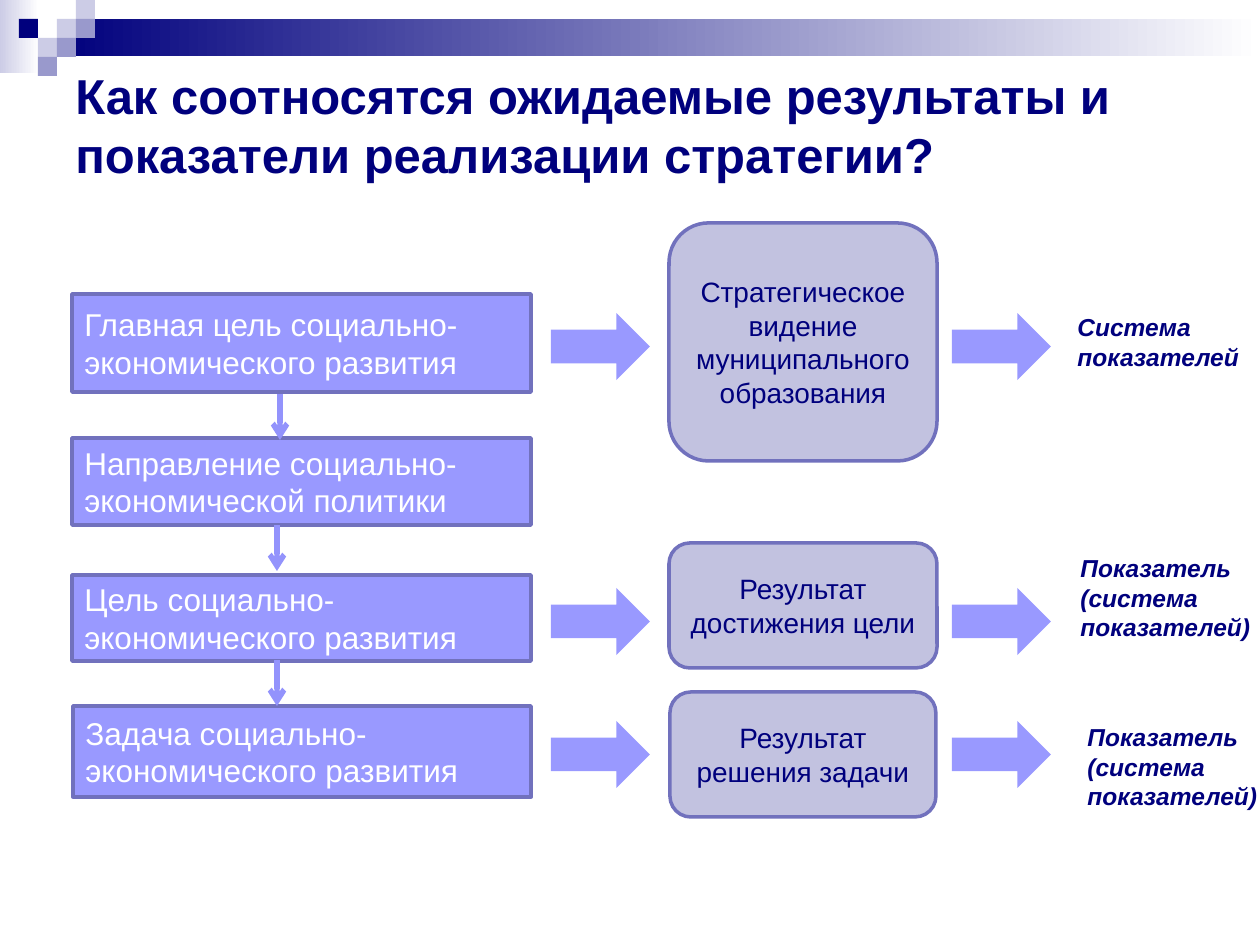
"""Build a slide relating strategy goals to expected results and indicators."""
from typing import NamedTuple

from lxml.etree import SubElement
from pptx import Presentation
from pptx.dml.color import RGBColor
from pptx.enum.shapes import MSO_CONNECTOR, MSO_SHAPE
from pptx.enum.text import MSO_ANCHOR, PP_ALIGN
from pptx.oxml.ns import qn
from pptx.util import Emu, Pt

NAVY = RGBColor(0x00, 0x00, 0x7D)
WHITE = RGBColor(0xFF, 0xFF, 0xFF)
LAVENDER = RGBColor(0xCC, 0xCC, 0xE6)
MUTED = RGBColor(0x99, 0x99, 0xCC)
PERIWINKLE = RGBColor(0x99, 0x99, 0xFF)
OUTLINE = RGBColor(0x71, 0x71, 0xBD)
RESULT_FILL = RGBColor(0xC2, 0xC2, 0xE0)
LINK = RGBColor(0x93, 0x93, 0xFC)

PIXELS_PER_INCH = 126
CELL = 19


class Box(NamedTuple):
    left: int
    top: int
    width: int
    height: int


class Card(NamedTuple):
    box: Box
    text: str
    kind: MSO_SHAPE = MSO_SHAPE.FLOWCHART_PROCESS


class Square(NamedTuple):
    column: int
    row: int
    color: RGBColor


class DownLink(NamedTuple):
    x: int
    top: int
    bottom: int


SQUARES = [
    Square(3, 1, LAVENDER), Square(4, 0, LAVENDER), Square(4, 1, MUTED),
    Square(2, 2, LAVENDER), Square(1, 1, NAVY), Square(3, 2, MUTED),
    Square(2, 3, MUTED),
]
GOALS = [
    Card(Box(72, 294, 459, 98), "Главная цель социально-экономического развития", MSO_SHAPE.PENTAGON),
    Card(Box(72, 438, 459, 87), "Направление социально-экономической политики"),
    Card(Box(72, 575, 459, 86), "Цель социально-экономического развития"),
    Card(Box(73, 706, 458, 91), "Задача социально-экономического развития"),
]
RESULTS = [
    Card(Box(669, 223, 268, 238), "Стратегическое видение муниципального образования"),
    Card(Box(669, 543, 268, 125), "Результат достижения цели"),
    Card(Box(670, 692, 266, 125), "Результат решения задачи"),
]
INDICATORS = [
    Card(Box(1065, 306, 192, 72), "Система показателей"),
    Card(Box(1068, 547, 196, 102), "Показатель (система показателей)"),
    Card(Box(1075, 716, 196, 102), "Показатель (система показателей)"),
]
DOWN_LINKS = [DownLink(280, 394, 440), DownLink(277, 525, 571), DownLink(277, 660, 706)]
ARROW_COLUMNS = (551, 952)
ARROW_ROWS = (313, 588, 721)


def px(value: int) -> Emu:
    return Emu(round(value * 914400 / PIXELS_PER_INCH))


def place(box: Box) -> list[Emu]:
    return [px(value) for value in box]


def write(shape, text: str, *, size: int, color: RGBColor, bold: bool = False, italic: bool = False,
          align: PP_ALIGN = PP_ALIGN.LEFT, anchor: MSO_ANCHOR = MSO_ANCHOR.MIDDLE) -> None:
    frame = shape.text_frame
    frame.word_wrap = True
    frame.vertical_anchor = anchor
    paragraph = frame.paragraphs[0]
    paragraph.alignment = align
    run = paragraph.add_run()
    run.text = text
    font = run.font
    font.name, font.size, font.bold, font.italic = "Arial", Pt(size), bold, italic
    font.color.rgb = color


def add_block(slide, kind: MSO_SHAPE, box: Box, fill: RGBColor, outline: RGBColor | None = None):
    shape = slide.shapes.add_shape(kind, *place(box))
    shape.shadow.inherit = False
    shape.fill.solid()
    shape.fill.fore_color.rgb = fill
    if outline is None:
        shape.line.fill.background()
    else:
        shape.line.color.rgb = outline
        shape.line.width = Pt(2)
    return shape


def add_fade(slide, box: Box, start: RGBColor) -> None:
    shape = add_block(slide, MSO_SHAPE.RECTANGLE, box, start)
    shape.fill.gradient()
    shape.fill.gradient_angle = 0
    for stop, color in zip(shape.fill.gradient_stops, (start, WHITE)):
        stop.color.rgb = color


def add_label(slide, box: Box, text: str, **style) -> None:
    write(slide.shapes.add_textbox(*place(box)), text, color=NAVY, bold=True, **style)


def add_down_link(slide, link: DownLink) -> None:
    connector = slide.shapes.add_connector(
        MSO_CONNECTOR.STRAIGHT, px(link.x), px(link.top), px(link.x), px(link.bottom))
    connector.line.color.rgb = LINK
    connector.line.width = Pt(3)
    SubElement(connector.line._get_or_add_ln(), qn("a:tailEnd"), type="arrow")
    SubElement(connector._element.spPr, qn("a:effectLst"))


def add_header(slide) -> None:
    add_fade(slide, Box(0, 0, 39, 73), LAVENDER)
    add_fade(slide, Box(3 * CELL, CELL, 1203, 2 * CELL - 1), NAVY)
    for square in SQUARES:
        box = Box(square.column * CELL, square.row * CELL, CELL, CELL)
        add_block(slide, MSO_SHAPE.RECTANGLE, box, square.color)
    add_label(slide, Box(63, 63, 1134, 122),
              "Как соотносятся ожидаемые результаты и показатели реализации стратегии?", size=28)


def add_diagram(slide) -> None:
    for goal in GOALS:
        shape = add_block(slide, goal.kind, goal.box, PERIWINKLE, OUTLINE)
        if goal.kind == MSO_SHAPE.PENTAGON:
            shape.adjustments[0] = 0
        write(shape, goal.text, size=18, color=WHITE)
    for link in DOWN_LINKS:
        add_down_link(slide, link)
    for result in RESULTS:
        shape = add_block(slide, MSO_SHAPE.ROUNDED_RECTANGLE, result.box, RESULT_FILL, OUTLINE)
        write(shape, result.text, size=16, color=NAVY, align=PP_ALIGN.CENTER)
    for left in ARROW_COLUMNS:
        for top in ARROW_ROWS:
            add_block(slide, MSO_SHAPE.RIGHT_ARROW, Box(left, top, 99, 67), PERIWINKLE)
    for indicator in INDICATORS:
        add_label(slide, indicator.box, indicator.text, size=14, italic=True, anchor=MSO_ANCHOR.TOP)


def main() -> None:
    presentation = Presentation()
    presentation.slide_width, presentation.slide_height = px(1260), px(945)
    slide = presentation.slides.add_slide(presentation.slide_layouts[6])
    add_header(slide)
    add_diagram(slide)
    presentation.save("out.pptx")


if __name__ == "__main__":
    main()
